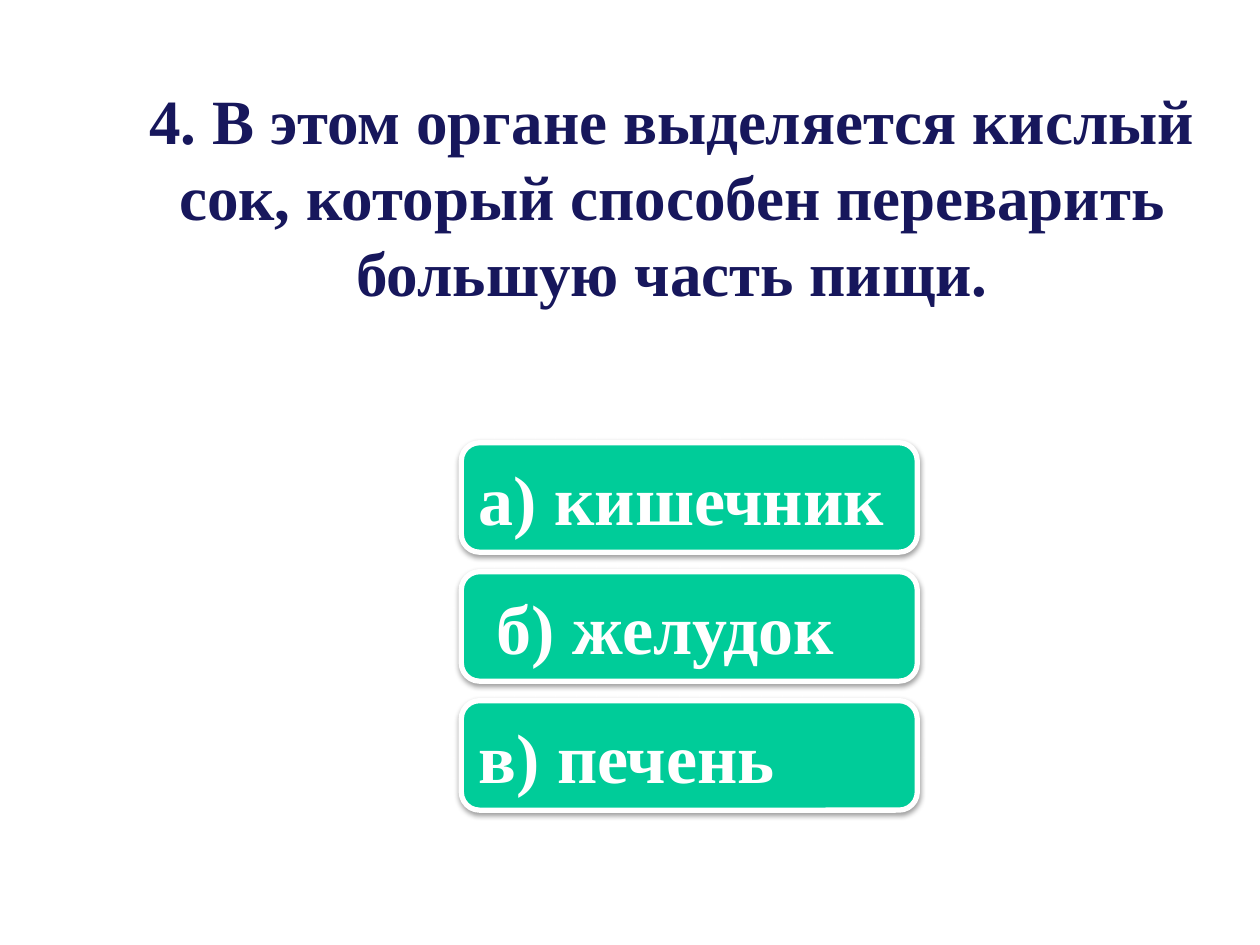
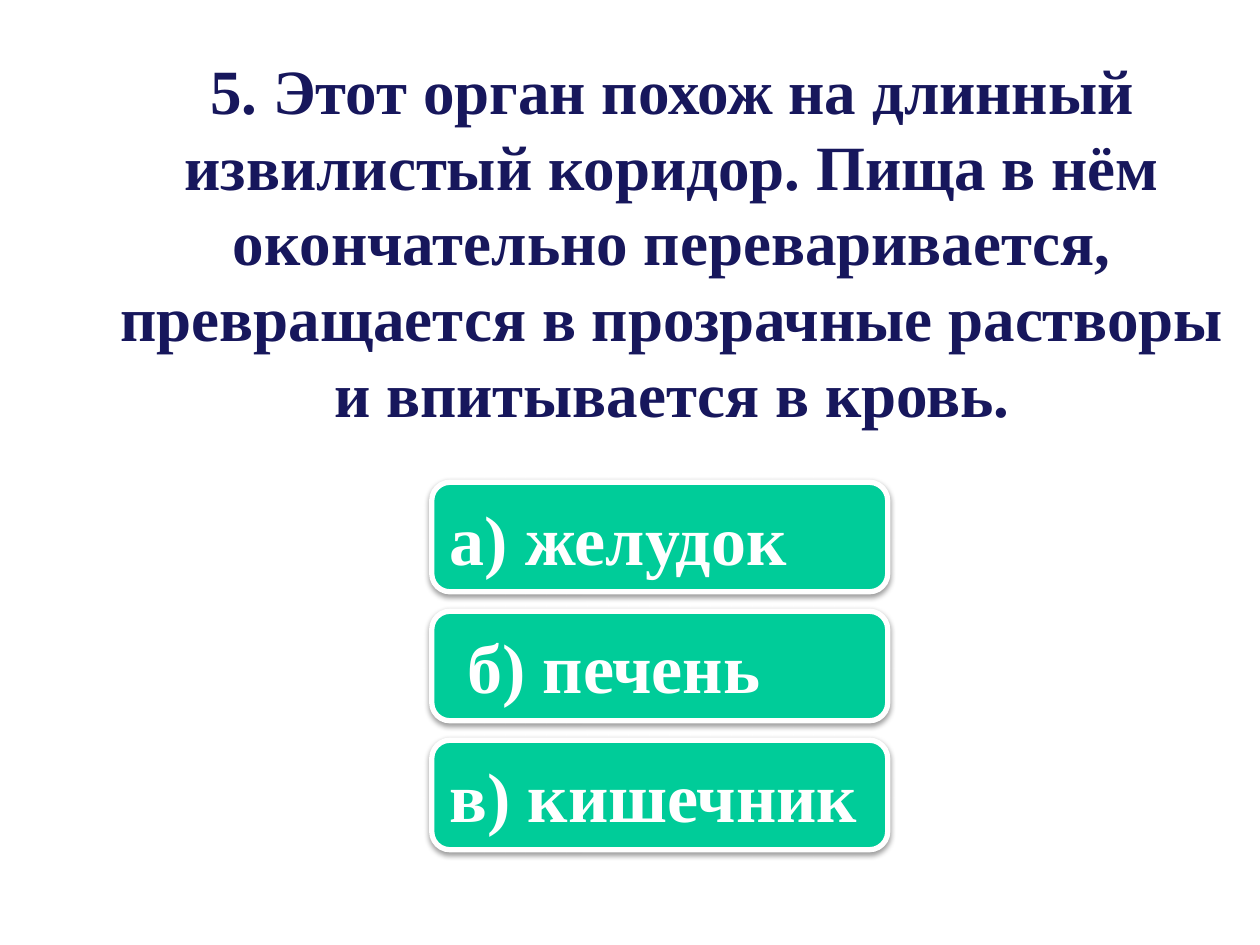
import dataclasses

import pptx
import pptx.dml.color
import pptx.enum.shapes
import pptx.enum.text
import pptx.oxml
import pptx.oxml.ns
import pptx.util

Pt = pptx.util.Pt
RGB = pptx.dml.color.RGBColor
ALIGN = pptx.enum.text.PP_ALIGN

SHADOW_XML = (
    f'<a:effectLst {pptx.oxml.ns.nsdecls("a")}>'
    f'<a:outerShdw blurRad="{Pt(3.1)}" dist="{Pt(1.6)}" dir="5400000" rotWithShape="0">'
    '<a:srgbClr val="000000"><a:alpha val="38000"/></a:srgbClr>'
    '</a:outerShdw></a:effectLst>'
)


@dataclasses.dataclass(frozen=True)
class Theme:
    font: str = "Times New Roman"
    navy: RGB = RGB(0x17, 0x17, 0x5C)
    green: RGB = RGB(0x00, 0xCC, 0x99)
    white: RGB = RGB(0xFF, 0xFF, 0xFF)
    question_size: int = 36
    answer_size: int = 40


class Quiz:
    """Holds the theme and the slide being built."""

    def __init__(self, prs, theme):
        self.prs, self.theme, self.s = prs, theme, None

    def new_slide(self):
        self.s = self.prs.slides.add_slide(self.prs.slide_layouts[6])

    def set_text(self, tf, text, size, color, align):
        tf.word_wrap = True
        p = tf.paragraphs[0]
        p.text = text
        p.alignment = align
        p.font.name = self.theme.font
        p.font.size = Pt(size)
        p.font.bold = True
        p.font.color.rgb = color

    def question(self, text, top, height):
        tf = self.s.shapes.add_textbox(Pt(48), Pt(top), Pt(672), Pt(height)).text_frame
        self.set_text(tf, text, self.theme.question_size, self.theme.navy, ALIGN.CENTER)
        tf.auto_size = pptx.enum.text.MSO_AUTO_SIZE.SHAPE_TO_FIT_TEXT

    def answer(self, text, left, top, inset):
        sp = self.s.shapes.add_shape(pptx.enum.shapes.MSO_SHAPE.ROUNDED_RECTANGLE,
                                     Pt(left), Pt(top), Pt(260.6), Pt(62.6))
        sp.fill.solid()
        sp.fill.fore_color.rgb = self.theme.green
        sp.line.color.rgb = self.theme.white
        sp.line.width = Pt(3)
        sp._element.spPr.append(pptx.oxml.parse_xml(SHADOW_XML))
        tf = sp.text_frame
        tf.vertical_anchor = pptx.enum.text.MSO_ANCHOR.MIDDLE
        tf.margin_left = Pt(inset)
        self.set_text(tf, text, self.theme.answer_size, self.theme.white, ALIGN.LEFT)

    def answers(self, texts, left, top):
        """Stack the answers at an equal step; the middle one is set in a little."""
        for i, text in enumerate(texts):
            self.answer(text, left, top + i * 73.7, 17.2 if i == 1 else 7.2)


def main():
    prs = pptx.Presentation()
    prs.slide_width, prs.slide_height = Pt(720), Pt(540)
    quiz = Quiz(prs, Theme())

    quiz.new_slide()
    quiz.question("4. В этом органе выделяется кислый сок, который способен "
                  "переварить большую часть пищи.", 43.2, 138.2)
    quiz.answers(["а) кишечник", "б) желудок", "в) печень"], 263.6, 253)

    quiz.new_slide()
    quiz.question("5. Этот орган похож на длинный извилистый коридор. Пища в нём "
                  "окончательно переваривается, превращается в прозрачные растворы "
                  "и впитывается в кровь.", 26, 225.4)
    quiz.answers(["а) желудок", "б) печень", "в) кишечник"], 246.7, 275.6)

    prs.save("out.pptx")


if __name__ == "__main__":
    main()
